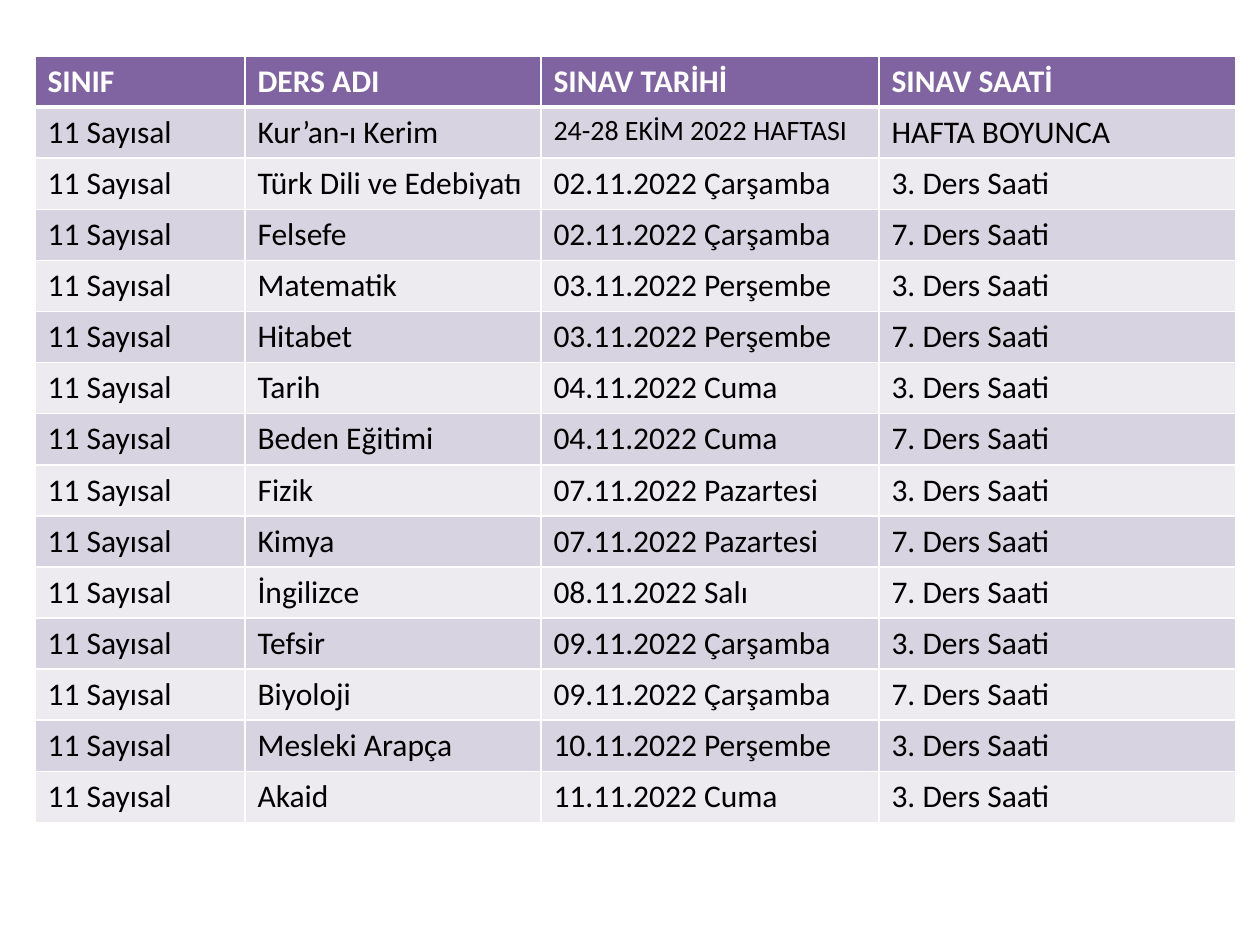
from lxml import etree
from pptx import Presentation
from pptx.dml.color import RGBColor
from pptx.oxml.ns import qn
from pptx.util import Emu, Pt

PX = 914400 / 126
FONT = "Calibri"
COLORS = {
    "header": "8064A2",
    "odd": "D8D3E0",
    "even": "EDEAF0",
    "border": "FFFFFF",
    "header_text": "FFFFFF",
    "body_text": "000000",
}
CLASS_NAME = "11 Sayısal"
HEADINGS = ["SINIF", "DERS ADI", "SINAV TARİHİ", "SINAV SAATİ"]
WEEK = "24-28 EKİM 2022 HAFTASI"
THIRD, SEVENTH = "3. Ders Saati", "7. Ders Saati"
EXAMS = [
    ("Kur’an-ı Kerim", WEEK, "HAFTA BOYUNCA"),
    ("Türk Dili ve Edebiyatı", "02.11.2022 Çarşamba", THIRD),
    ("Felsefe", "02.11.2022 Çarşamba", SEVENTH),
    ("Matematik", "03.11.2022 Perşembe", THIRD),
    ("Hitabet", "03.11.2022 Perşembe", SEVENTH),
    ("Tarih", "04.11.2022 Cuma", THIRD),
    ("Beden Eğitimi", "04.11.2022 Cuma", SEVENTH),
    ("Fizik", "07.11.2022 Pazartesi", THIRD),
    ("Kimya", "07.11.2022 Pazartesi", SEVENTH),
    ("İngilizce", "08.11.2022 Salı", SEVENTH),
    ("Tefsir", "09.11.2022 Çarşamba", THIRD),
    ("Biyoloji", "09.11.2022 Çarşamba", SEVENTH),
    ("Mesleki Arapça", "10.11.2022 Perşembe", THIRD),
    ("Akaid", "11.11.2022 Cuma", THIRD),
]
COLUMN_WIDTHS = [210, 296, 338, 357]
ROW_HEIGHT = 51


def px(length):
    """Turn a length in px into EMU."""
    return Emu(round(length * PX))


def set_borders(cell, widths):
    """Draw the cell's left, right, top and bottom borders in points."""
    properties = cell._tc.get_or_add_tcPr()
    for index, (side, width) in enumerate(zip("LRTB", widths)):
        line = etree.Element(qn(f"a:ln{side}"), w=str(Pt(width)))
        fill = etree.SubElement(line, qn("a:solidFill"))
        etree.SubElement(fill, qn("a:srgbClr"), val=COLORS["border"])
        properties.insert(index, line)


def style_cell(cell, text, row):
    """Write one cell and style it by its row."""
    is_header = row == 0
    fill_name = "header" if is_header else "odd" if row % 2 else "even"
    cell.fill.solid()
    cell.fill.fore_color.rgb = RGBColor.from_string(COLORS[fill_name])
    set_borders(cell, (1, 1, 3 if row == 1 else 1, 3 if is_header else 1))
    cell.text_frame.text = text
    font = cell.text_frame.paragraphs[0].runs[0].font
    font.name = FONT
    font.size = Pt(16 if text == WEEK else 18)
    font.bold = is_header
    text_name = "header_text" if is_header else "body_text"
    font.color.rgb = RGBColor.from_string(COLORS[text_name])


def add_exam_table(page, left, top):
    """Place the exam timetable with its corner at left and top."""
    rows = [HEADINGS] + [(CLASS_NAME, *exam) for exam in EXAMS]
    table = page.shapes.add_table(
        len(rows), len(HEADINGS), px(left), px(top),
        px(sum(COLUMN_WIDTHS)), px(ROW_HEIGHT * len(rows)),
    ).table
    for column, width in zip(table.columns, COLUMN_WIDTHS):
        column.width = px(width)
    for row, texts in enumerate(rows):
        table.rows[row].height = px(ROW_HEIGHT)
        for column, text in enumerate(texts):
            style_cell(table.cell(row, column), text, row)


def main():
    """Build the deck and save it."""
    deck = Presentation()
    deck.slide_width, deck.slide_height = px(1260), px(945)
    page = deck.slides.add_slide(deck.slide_layouts[6])
    add_exam_table(page, 35, 56)
    deck.save("out.pptx")


if __name__ == "__main__":
    main()
